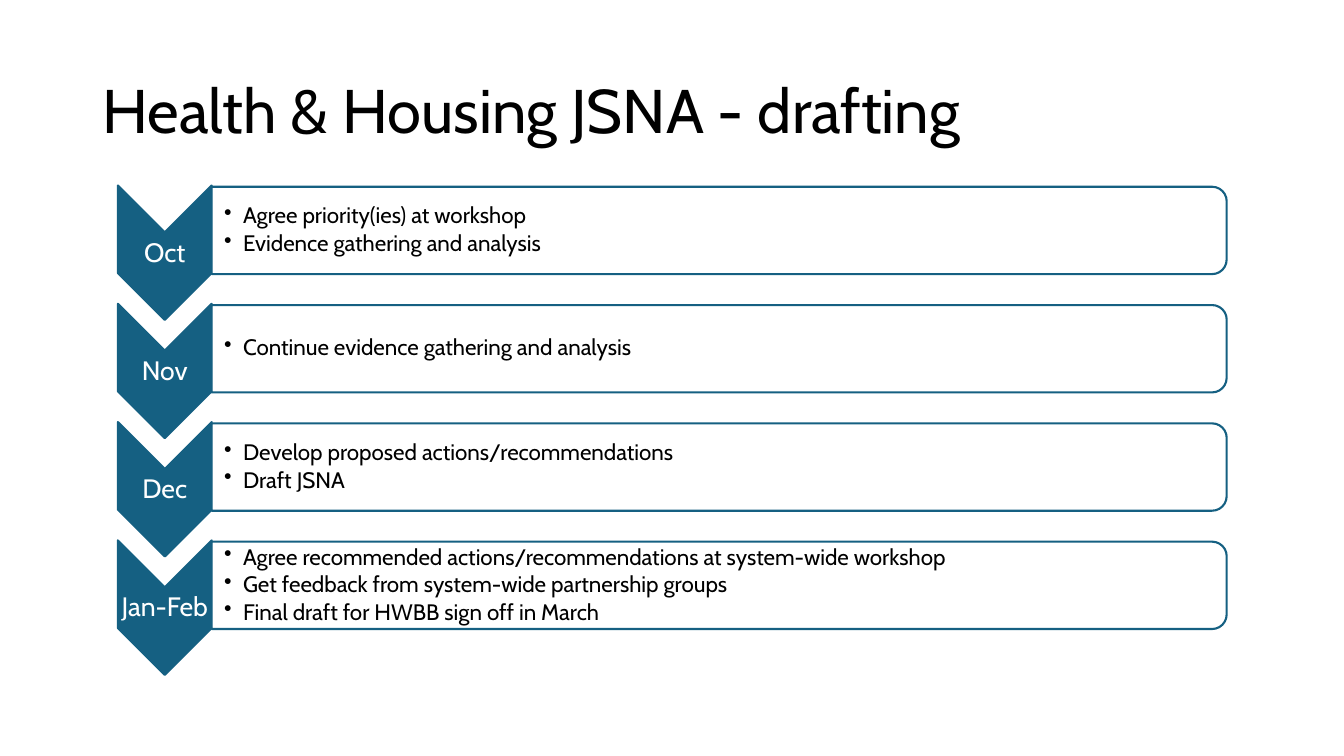
from dataclasses import dataclass

from lxml import etree
from pptx import Presentation
from pptx.dml.color import RGBColor
from pptx.enum.shapes import MSO_SHAPE
from pptx.enum.text import MSO_ANCHOR, PP_ALIGN
from pptx.oxml.ns import qn
from pptx.util import Pt

CHEVRON = MSO_SHAPE.CHEVRON
BAR = MSO_SHAPE.ROUND_2_SAME_RECTANGLE
MIDDLE = MSO_ANCHOR.MIDDLE
LEFT, CENTER = PP_ALIGN.LEFT, PP_ALIGN.CENTER


@dataclass(frozen=True)
class Theme:
    font: str = "Cabin"
    teal: RGBColor = RGBColor(0x15, 0x60, 0x82)
    white: RGBColor = RGBColor(0xFF, 0xFF, 0xFF)
    black: RGBColor = RGBColor(0, 0, 0)
    title_size: float = 44
    month_size: float = 19
    task_size: float = 16


THEME = Theme()
ROW_TOP, ROW_PITCH = 132.5, 84.5
MONTHS = [
    ("Oct", ["Agree priority(ies) at workshop",
             "Evidence gathering and analysis"]),
    ("Nov", ["Continue evidence gathering and analysis"]),
    ("Dec", ["Develop proposed actions/recommendations", "Draft JSNA"]),
    ("Jan-Feb", ["Agree recommended actions/recommendations at system-wide workshop",
                 "Get feedback from system-wide partnership groups",
                 "Final draft for HWBB sign off in March"]),
]


def add_run(p, text, size, color):
    r = p.add_run()
    r.text = text
    r.font.name = THEME.font
    r.font.size = Pt(size)
    r.font.color.rgb = color


def add_title(s, text):
    sp = s.shapes.title
    sp.left, sp.top, sp.width, sp.height = Pt(66), Pt(28.75), Pt(828), Pt(104.4)
    tf = sp.text_frame
    tf.vertical_anchor = MIDDLE
    p = tf.paragraphs[0]
    p.alignment = LEFT
    p.line_spacing = 0.9
    add_run(p, text, THEME.title_size, THEME.black)


def add_turned_shape(s, kind, left, top, width, height, fill):
    """Add a shape turned by 90 degrees that covers the given area."""
    x = left + (width - height) / 2
    y = top + (height - width) / 2
    sp = s.shapes.add_shape(kind, Pt(x), Pt(y), Pt(height), Pt(width))
    sp.rotation = 90
    sp.shadow.inherit = False
    sp.fill.solid()
    sp.fill.fore_color.rgb = fill
    sp.line.color.rgb = THEME.teal
    sp.line.width = Pt(1.5)
    return sp


def set_opacity(sp, percent):
    color = sp.fill._xPr.find(qn("a:solidFill"))[0]
    etree.SubElement(color, qn("a:alpha")).set("val", str(percent * 1000))


def add_text(s, left, top, width, height, lines, size, color, align, inset=0.72):
    """Add a text box and return its paragraphs."""
    tf = s.shapes.add_textbox(Pt(left), Pt(top), Pt(width), Pt(height)).text_frame
    tf.word_wrap = True
    tf.vertical_anchor = MIDDLE
    tf.margin_left = Pt(inset)
    tf.margin_top = tf.margin_right = tf.margin_bottom = Pt(0.72)
    for i, line in enumerate(lines):
        p = tf.add_paragraph() if i else tf.paragraphs[0]
        p.alignment = align
        p.line_spacing = 0.9
        p.space_after = Pt(0.15 * size)
        add_run(p, line, size, color)
    return tf.paragraphs


def set_bullet(p, indent):
    pPr = p._p.get_or_add_pPr()
    pPr.set("marL", str(Pt(indent)))
    pPr.set("indent", str(-Pt(indent)))
    etree.SubElement(pPr, qn("a:buChar")).set("char", "•")


def add_month(s, top, month, tasks):
    add_turned_shape(s, CHEVRON, 84.2, top, 67, 96, THEME.teal)
    add_text(s, 84.2, top + 34, 67, 29, [month],
             THEME.month_size, THEME.white, CENTER)
    bar = add_turned_shape(s, BAR, 151.2, top + 0.9, 725, 62.4, THEME.white)
    set_opacity(bar, 90)
    for p in add_text(s, 151.2, top + 4, 722, 56.2, tasks,
                      THEME.task_size, THEME.black, LEFT, inset=8.96):
        set_bullet(p, 13.5)


def main():
    prs = Presentation()
    prs.slide_width, prs.slide_height = Pt(960), Pt(540)
    s = prs.slides.add_slide(prs.slide_layouts[5])
    add_title(s, "Health & Housing JSNA - drafting")
    for i, (month, tasks) in enumerate(MONTHS):
        add_month(s, ROW_TOP + i * ROW_PITCH, month, tasks)
    prs.save("out.pptx")


if __name__ == "__main__":
    main()
